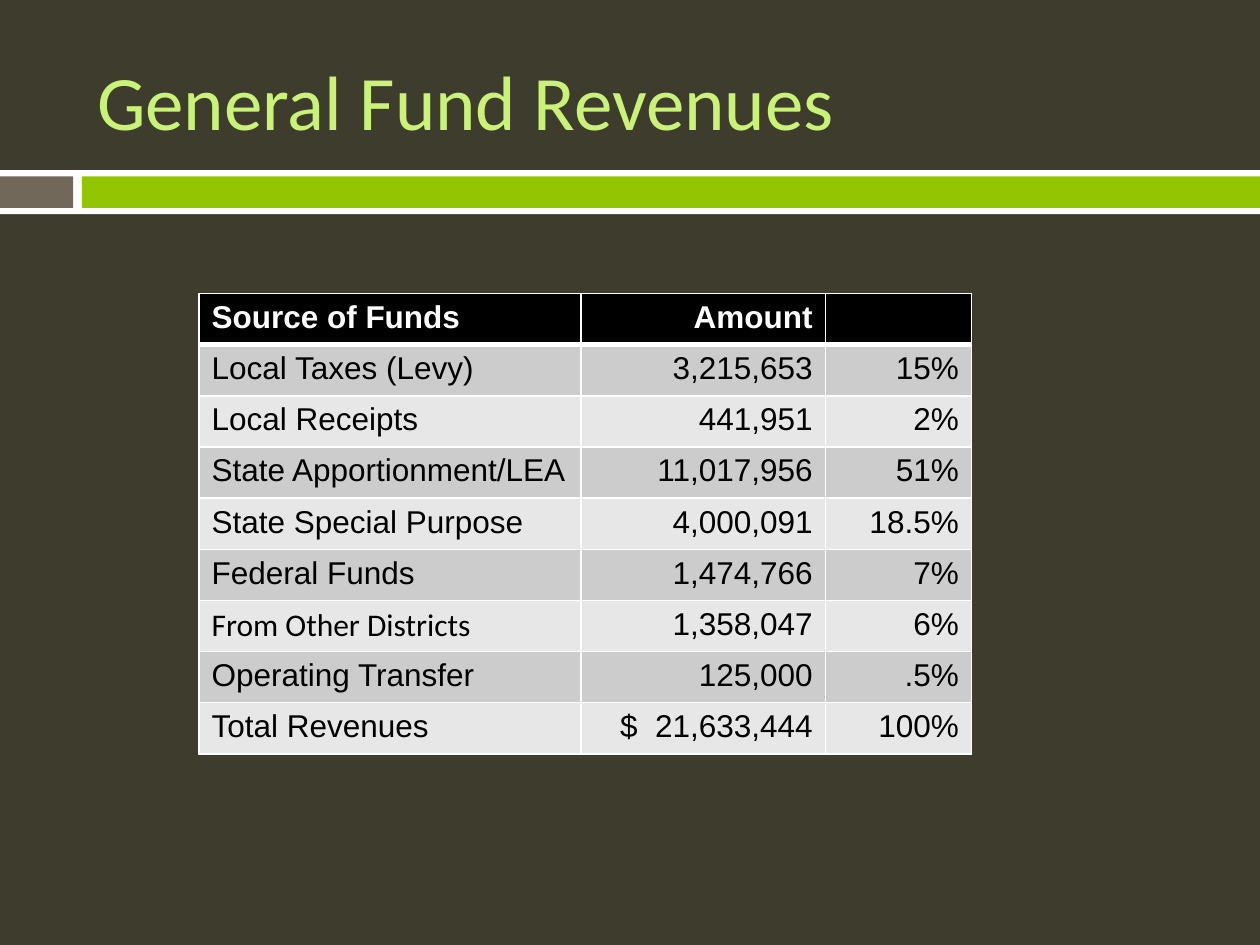
from lxml.etree import SubElement
from pptx import Presentation
from pptx.dml.color import RGBColor
from pptx.enum.shapes import MSO_SHAPE
from pptx.enum.text import MSO_ANCHOR, PP_ALIGN
from pptx.oxml.ns import qn
from pptx.util import Inches, Pt

BACKGROUND = RGBColor(0x3E, 0x3D, 0x2D)
WHITE = RGBColor(0xFF, 0xFF, 0xFF)
BLACK = RGBColor(0x00, 0x00, 0x00)
TAUPE = RGBColor(0x71, 0x68, 0x5A)
GREEN = RGBColor(0x94, 0xC6, 0x00)
LIME = RGBColor(0xCA, 0xF2, 0x78)
DARK_BAND = RGBColor(0xCC, 0xCC, 0xCC)
LIGHT_BAND = RGBColor(0xE7, 0xE7, 0xE7)

# Content
TITLE = "General Fund Revenues"
REVENUES = [
    ("Source of Funds", "Amount", ""),
    ("Local Taxes (Levy)", "3,215,653", "15%"),
    ("Local Receipts", "441,951", "2%"),
    ("State Apportionment/LEA", "11,017,956", "51%"),
    ("State Special Purpose", "4,000,091", "18.5%"),
    ("Federal Funds", "1,474,766", "7%"),
    ("From Other Districts", "1,358,047", "6%"),
    ("Operating Transfer", "125,000", ".5%"),
    ("Total Revenues", "$  21,633,444", "100%"),
]
CALIBRI_LABELS = {"From Other Districts"}
COLUMN_WIDTHS = (3.03, 1.94, 1.16)
ROW_HEIGHT = 0.406
BARS = [  # left, top, width, height, colour
    (0, 1.35, 10, 0.35, WHITE),
    (0, 1.4, 0.58, 0.25, TAUPE),
    (0.65, 1.4, 9.35, 0.25, GREEN),
]


def format_text(paragraph, text, color, **font_values):
    run = paragraph.add_run()
    run.text = text
    run.font.color.rgb = color
    for attribute, value in font_values.items():
        setattr(run.font, attribute, value)


def add_border(cell, side, points):
    line = SubElement(cell._tc.get_or_add_tcPr(), qn(f"a:ln{side}"), w=str(Pt(points)))
    fill = SubElement(line, qn("a:solidFill"))
    SubElement(fill, qn("a:srgbClr"), val=str(WHITE))


presentation = Presentation()
presentation.slide_width, presentation.slide_height = Inches(10), Inches(7.5)
slide = presentation.slides.add_slide(presentation.slide_layouts[5])
slide.background.fill.solid()
slide.background.fill.fore_color.rgb = BACKGROUND

# Divider bars
for *box, color in BARS:
    bar = slide.shapes.add_shape(MSO_SHAPE.RECTANGLE, *map(Inches, box))
    bar.shadow.inherit = False
    bar.fill.solid()
    bar.fill.fore_color.rgb = color
    bar.line.fill.background()

# Title
title = slide.shapes.title
title_box = {"left": 0.67, "top": 0.25, "width": 8.92, "height": 1.08}
for attribute, value in title_box.items():
    setattr(title, attribute, Inches(value))
title.text_frame.vertical_anchor = MSO_ANCHOR.MIDDLE
heading = title.text_frame.paragraphs[0]
heading.alignment = PP_ALIGN.LEFT
format_text(heading, TITLE, LIME, name="Calibri", size=Pt(44))

# Revenue table
table = slide.shapes.add_table(
    len(REVENUES), len(COLUMN_WIDTHS), Inches(1.58), Inches(2.33),
    Inches(sum(COLUMN_WIDTHS)), Inches(ROW_HEIGHT * len(REVENUES)),
).table
for column, width in zip(table.columns, COLUMN_WIDTHS):
    column.width = Inches(width)

for row_index, revenue in enumerate(REVENUES):
    table.rows[row_index].height = Inches(ROW_HEIGHT)
    is_header = row_index == 0
    band = BLACK if is_header else DARK_BAND if row_index % 2 else LIGHT_BAND
    for column_index, text in enumerate(revenue):
        cell = table.cell(row_index, column_index)
        # The rule under the header is thicker than the other borders
        borders = {"L": 1, "R": 1, "T": 3 if row_index == 1 else 1, "B": 3 if is_header else 1}
        for side, points in borders.items():
            add_border(cell, side, points)
        cell.fill.solid()
        cell.fill.fore_color.rgb = band
        entry = cell.text_frame.paragraphs[0]
        entry.alignment = PP_ALIGN.RIGHT if column_index else PP_ALIGN.LEFT
        if text:
            format_text(
                entry, text, WHITE if is_header else BLACK,
                name="Calibri" if text in CALIBRI_LABELS else "Arial",
                size=Pt(18), bold=is_header,
            )

presentation.save("out.pptx")
